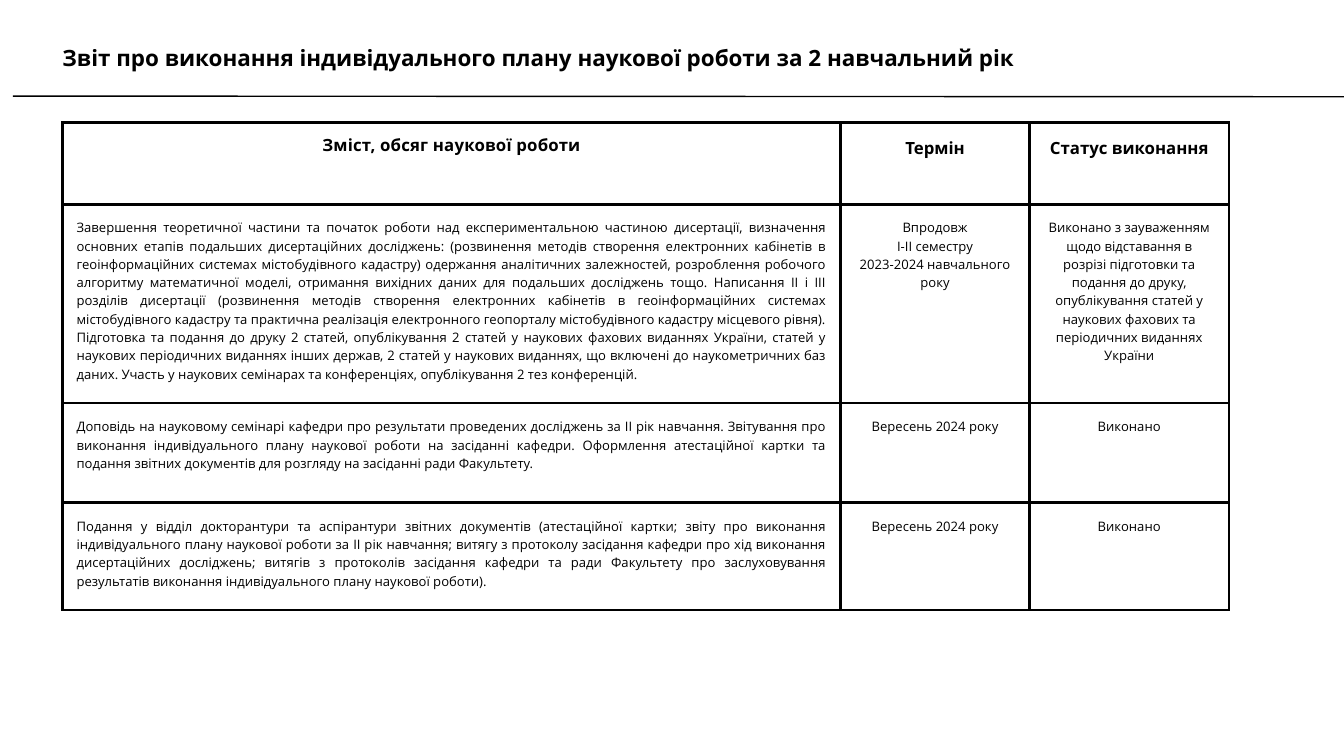
from lxml.etree import SubElement
from pptx import Presentation
from pptx.dml.color import RGBColor
from pptx.enum.shapes import MSO_CONNECTOR
from pptx.enum.text import MSO_ANCHOR, MSO_AUTO_SIZE, PP_ALIGN
from pptx.oxml.ns import qn
from pptx.util import Emu, Pt

PX = 9144
BLACK = "000000"


def px(length):
    return Emu(length * PX)


def format_text(paragraph, size, bold, leading, align):
    paragraph.alignment = align
    paragraph.line_spacing = Pt(leading)
    for run in paragraph.runs:
        run.font.name = "Open Sans"
        run.font.size = Pt(size)
        run.font.bold = bold
        run.font.color.rgb = RGBColor.from_string(BLACK)


report = Presentation()
report.slide_width, report.slide_height = px(2000), px(1125)
slide = report.slides.add_slide(report.slide_layouts[5])

divider = slide.shapes.add_connector(MSO_CONNECTOR.STRAIGHT, px(2019), px(144), px(19), px(143))
divider.line.color.rgb = RGBColor.from_string(BLACK)
divider.line.width = Pt(1.5)
SubElement(divider.element.spPr, qn("a:effectLst"))

dissertation_tasks = [
    "Завершення теоретичної частини та початок роботи над експериментальною частиною дисертації, "
    "визначення основних етапів подальших дисертаційних досліджень: (розвинення методів створення "
    "електронних кабінетів в геоінформаційних системах містобудівного кадастру) одержання аналітичних "
    "залежностей, розроблення робочого алгоритму математичної моделі, отримання вихідних даних для "
    "подальших досліджень тощо.",
    "Написання ІІ і ІІІ розділів дисертації (розвинення методів створення електронних кабінетів в "
    "геоінформаційних системах містобудівного кадастру та практична реалізація електронного геопорталу "
    "містобудівного кадастру місцевого рівня).",
    "Підготовка та подання до друку 2 статей, опублікування 2 статей у наукових фахових виданнях України, "
    "статей у наукових періодичних виданнях інших держав, 2 статей у наукових виданнях, що включені до "
    "наукометричних баз даних.",
    "Участь у наукових семінарах та конференціях, опублікування 2 тез конференцій.",
]
rows = [
    ["Зміст, обсяг наукової роботи", "Термін", "Статус виконання"],
    [
        " ".join(dissertation_tasks),
        "Впродовж\nІ-ІІ семестру\n2023-2024 навчального року",
        "Виконано з зауваженням щодо відставання в розрізі підготовки та подання до друку, "
        "опублікування статей у наукових фахових та періодичних виданнях України",
    ],
    [
        "Доповідь на науковому семінарі кафедри про результати проведених досліджень за ІІ рік навчання. "
        "Звітування про виконання індивідуального плану наукової роботи на засіданні кафедри. Оформлення "
        "атестаційної картки та подання звітних документів для розгляду на засіданні ради Факультету.",
        "Вересень 2024 року",
        "Виконано",
    ],
    [
        "Подання у відділ докторантури та аспірантури звітних документів (атестаційної картки; звіту про "
        "виконання індивідуального плану наукової роботи за ІІ рік навчання; витягу з протоколу засідання "
        "кафедри про хід виконання дисертаційних досліджень; витягів з протоколів засідання кафедри та ради "
        "Факультету про заслуховування результатів виконання індивідуального плану наукової роботи).",
        "Вересень 2024 року",
        "Виконано",
    ],
]
column_widths = [1158, 281, 297]
row_heights = [122, 296, 148, 160]

plan = slide.shapes.add_table(
    len(rows), len(column_widths), px(93), px(182), px(sum(column_widths)), px(sum(row_heights))
).table
plan.first_row = plan.horz_banding = False
for column, width in zip(plan.columns, column_widths):
    column.width = px(width)

for r, (texts, height) in enumerate(zip(rows, row_heights)):
    plan.rows[r].height = px(height)
    for c, text in enumerate(texts):
        cell = plan.cell(r, c)
        cell.margin_left = cell.margin_right = cell.margin_top = cell.margin_bottom = px(21)
        cell.text_frame.text = text
        for paragraph in cell.text_frame.paragraphs:
            if r == 0:
                format_text(paragraph, 18, True, 22 if c == 0 else 25.2, PP_ALIGN.CENTER)
            else:
                format_text(paragraph, 14, False, 19.6, PP_ALIGN.JUSTIFY if c == 0 else PP_ALIGN.CENTER)
            if r == c == 0:
                paragraph.runs[0].font._element.set("spc", "20")
        properties = cell._tc.get_or_add_tcPr()
        for side in ("a:lnL", "a:lnR", "a:lnT", "a:lnB"):
            border = SubElement(properties, qn(side), w=str(Pt(3)))
            SubElement(SubElement(border, qn("a:solidFill")), qn("a:srgbClr"), val=BLACK)
        cell.fill.background()

title = slide.shapes.title
title.left, title.top, title.width, title.height = px(93), px(75), px(1438), px(31)
heading = title.text_frame
heading.text = "Звіт про виконання індивідуального плану наукової роботи за 2 навчальний рік"
heading.margin_left = heading.margin_right = heading.margin_top = heading.margin_bottom = 0
heading.vertical_anchor = MSO_ANCHOR.TOP
heading.word_wrap = True
heading.auto_size = MSO_AUTO_SIZE.SHAPE_TO_FIT_TEXT
format_text(heading.paragraphs[0], 24, True, 21.6, PP_ALIGN.LEFT)

report.save("out.pptx")
